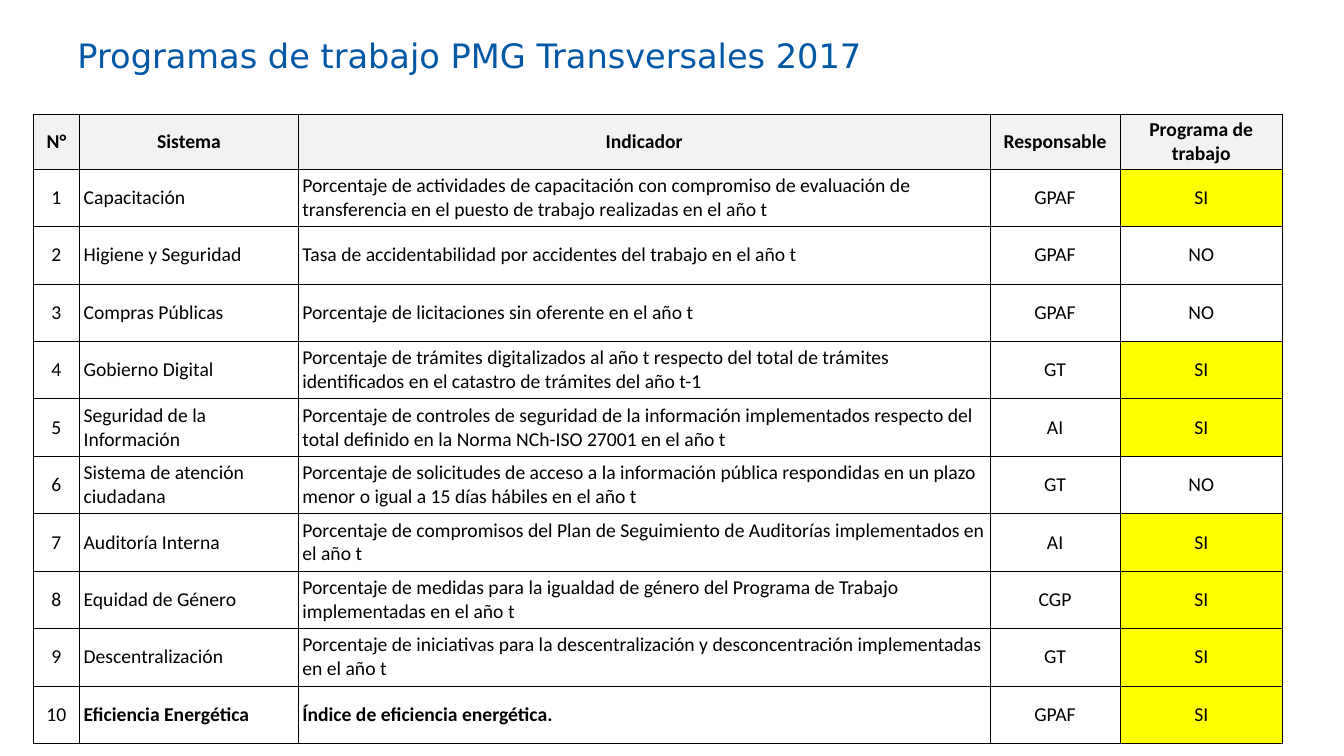
from lxml.etree import SubElement
from pptx import Presentation
from pptx.dml.color import RGBColor
from pptx.enum.text import MSO_ANCHOR as Anchor, PP_ALIGN as Align
from pptx.oxml.ns import qn
from pptx.util import Inches, Pt

BLUE = RGBColor(0x00, 0x57, 0xA6)
BLACK = RGBColor(0x00, 0x00, 0x00)
WHITE = RGBColor(0xFF, 0xFF, 0xFF)
GRAY = RGBColor(0xF2, 0xF2, 0xF2)
YELLOW = RGBColor(0xFF, 0xFF, 0x00)

HEADERS = ["N°", "Sistema", "Indicador", "Responsable", "Programa de trabajo"]
COLUMN_WIDTHS = [0.46, 2.17, 6.86, 1.29, 1.61]
HEADER_HEIGHT, ROW_HEIGHT = 0.5, 0.57
TEXT_COLUMNS = (1, 2)
PROGRAMS = [
    ("Capacitación", "Porcentaje de actividades de capacitación con compromiso de evaluación de "
     "transferencia en el puesto de trabajo realizadas en el año t", "GPAF", "SI"),
    ("Higiene y Seguridad", "Tasa de accidentabilidad por accidentes del trabajo en el año t",
     "GPAF", "NO"),
    ("Compras Públicas", "Porcentaje de licitaciones sin oferente en el año t", "GPAF", "NO"),
    ("Gobierno Digital", "Porcentaje de trámites digitalizados al año t respecto del total de "
     "trámites identificados en el catastro de trámites del año t-1", "GT", "SI"),
    ("Seguridad de la Información", "Porcentaje de controles de seguridad de la información "
     "implementados respecto del total definido en la Norma NCh-ISO 27001 en el año t",
     "AI", "SI"),
    ("Sistema de atención ciudadana", "Porcentaje de solicitudes de acceso a la información "
     "pública respondidas en un plazo menor o igual a 15 días hábiles en el año t", "GT", "NO"),
    ("Auditoría Interna", "Porcentaje de compromisos del Plan de Seguimiento de Auditorías "
     "implementados en el año t", "AI", "SI"),
    ("Equidad de Género", "Porcentaje de medidas para la igualdad de género del Programa de "
     "Trabajo implementadas en el año t", "CGP", "SI"),
    ("Descentralización", "Porcentaje de iniciativas para la descentralización y "
     "desconcentración implementadas en el año t", "GT", "SI"),
    ("Eficiencia Energética", "Índice de eficiencia energética.", "GPAF", "SI"),
]


class SlideBuilder:
    """Adds styled elements to one slide."""

    title_font = {"name": "DejaVu Sans", "size": Pt(24)}
    table_font = {"name": "Calibri", "size": Pt(14)}
    cell_format = {"vertical_anchor": Anchor.MIDDLE, "margin_left": Inches(0.04),
                   "margin_right": Inches(0.04), "margin_top": Inches(0.04),
                   "margin_bottom": Inches(0.04)}
    border_width = Pt(0.5)

    def __init__(self, slide):
        self.slide = slide

    def apply(self, target, values):
        for name, value in values.items():
            setattr(target, name, value)

    def add_text(self, paragraph, text, font, color, align=Align.LEFT):
        paragraph.alignment = align
        run = paragraph.add_run()
        run.text = text
        self.apply(run.font, font)
        run.font.color.rgb = color

    def title(self, text, left, top, width, height):
        shape = self.slide.shapes.add_textbox(
            Inches(left), Inches(top), Inches(width), Inches(height))
        self.apply(shape.text_frame, {"word_wrap": True, "margin_top": Inches(0.08)})
        self.add_text(shape.text_frame.paragraphs[0], text, self.title_font, BLUE)

    def borders(self, cell):
        properties = cell._tc.get_or_add_tcPr()
        for side in ("a:lnL", "a:lnR", "a:lnT", "a:lnB"):
            line = SubElement(properties, qn(side), w=str(self.border_width))
            fill = SubElement(line, qn("a:solidFill"))
            SubElement(fill, qn("a:srgbClr"), val=str(BLACK))

    def cell(self, cell, text, fill, bold, align):
        self.apply(cell, self.cell_format)
        self.borders(cell)
        cell.fill.solid()
        cell.fill.fore_color.rgb = fill
        font = {**self.table_font, "bold": bold}
        self.add_text(cell.text_frame.paragraphs[0], text, font, BLACK, align)

    def table(self, rows, left, top):
        heights = [HEADER_HEIGHT] + [ROW_HEIGHT] * (len(rows) - 1)
        table = self.slide.shapes.add_table(
            len(rows), len(COLUMN_WIDTHS), Inches(left), Inches(top),
            Inches(sum(COLUMN_WIDTHS)), Inches(sum(heights))).table
        table.horz_banding = False
        for column, width in zip(table.columns, COLUMN_WIDTHS):
            column.width = Inches(width)
        for row, height in zip(table.rows, heights):
            row.height = Inches(height)
        last = len(rows) - 1
        for row, texts in enumerate(rows):
            for column, text in enumerate(texts):
                is_text = row > 0 and column in TEXT_COLUMNS
                fill = GRAY if row == 0 else YELLOW if text == "SI" else WHITE
                bold = row == 0 or (row == last and is_text)
                align = Align.LEFT if is_text else Align.CENTER
                self.cell(table.cell(row, column), text, fill, bold, align)


def main():
    presentation = Presentation()
    presentation.slide_width = Inches(13.33)
    presentation.slide_height = Inches(7.5)
    builder = SlideBuilder(presentation.slides.add_slide(presentation.slide_layouts[6]))
    builder.title("Programas de trabajo PMG Transversales 2017", 0.67, 0.27, 12, 1.25)
    rows = [(str(number), *program) for number, program in enumerate(PROGRAMS, 1)]
    builder.table([HEADERS, *rows], 0.33, 1.13)
    presentation.save("out.pptx")


if __name__ == "__main__":
    main()
